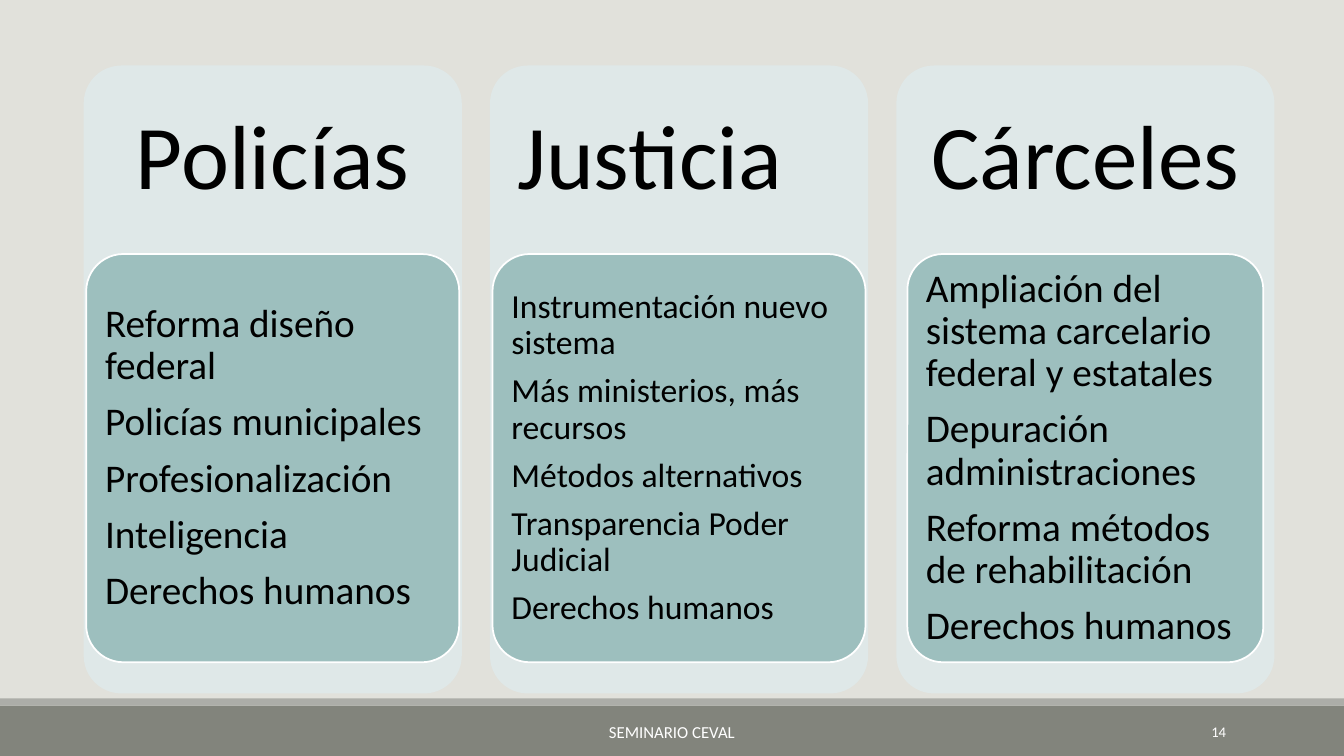
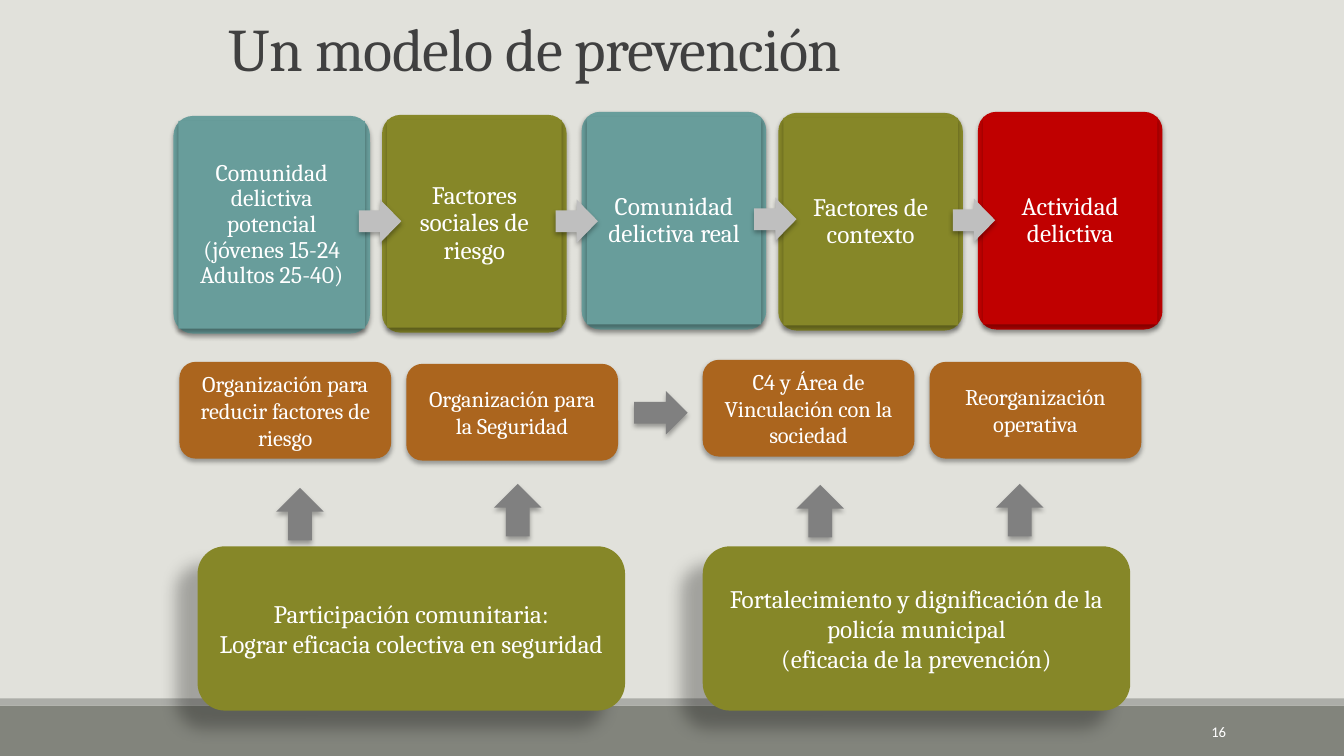
from dataclasses import dataclass

from lxml.etree import SubElement
from pptx import Presentation
from pptx.dml.color import RGBColor
from pptx.enum.shapes import MSO_SHAPE as Preset
from pptx.enum.text import MSO_ANCHOR as Anchor, MSO_AUTO_SIZE as AutoSize, PP_ALIGN as Align
from pptx.oxml.ns import qn
from pptx.shapes.autoshape import Shape
from pptx.slide import Slide
from pptx.util import Inches, Pt

BACKGROUND = RGBColor(0xE1, 0xE1, 0xDB)
BAND = RGBColor(0x82, 0x84, 0x7C)
BAND_EDGE = RGBColor(0xAC, 0xAD, 0xA8)
WHITE = RGBColor(0xFF, 0xFF, 0xFF)
BLACK = RGBColor(0x00, 0x00, 0x00)
TITLE_GREY = RGBColor(0x40, 0x40, 0x40)
COLUMN_TINT = RGBColor(0xDF, 0xE8, 0xE8)
PANEL_TEAL = RGBColor(0x9D, 0xBF, 0xBE)
TEAL = RGBColor(0x68, 0x9D, 0x9B)
OLIVE = RGBColor(0x86, 0x87, 0x28)
RED = RGBColor(0xC0, 0x00, 0x00)
BROWN = RGBColor(0xAB, 0x65, 0x1E)
LIGHT_ARROW = RGBColor(0xBF, 0xBF, 0xBF)
DARK_ARROW = RGBColor(0x80, 0x80, 0x80)
SANS = "Calibri"
SERIF = "Cambria"
SLIDE_WIDTH = 13.33


@dataclass(frozen=True)
class Box:
    left: float
    top: float
    width: float
    height: float

    def lengths(self) -> tuple[Inches, Inches, Inches, Inches]:
        return Inches(self.left), Inches(self.top), Inches(self.width), Inches(self.height)

    def inset(self, margin: float) -> "Box":
        return Box(self.left + margin, self.top + margin,
                   self.width - 2 * margin, self.height - 2 * margin)


@dataclass(frozen=True)
class Shadow:
    opacity: int
    blur: float
    distance: float
    angle: int


@dataclass(frozen=True)
class TextStyle:
    font: str
    size: float
    color: RGBColor
    align: Align = Align.CENTER
    line_spacing: float = 1.0
    space_after: float = 0
    margin_x: float = 0.1
    margin_y: float = 0.05


@dataclass(frozen=True)
class Column:
    heading: str
    points: tuple[str, ...]
    size: int
    panel_width: float
    heading_shift: float = 0


@dataclass(frozen=True)
class Block:
    text: str
    box: Box
    fill: RGBColor
    size: int


SOFT_SHADOW = Shadow(32, 3.5, 2.2, 90)
DEEP_SHADOW = Shadow(28, 11.8, 19.7, 141)

COLUMNS = (
    Column("Policías", ("Reforma diseño federal", "Policías municipales", "Profesionalización",
                        "Inteligencia", "Derechos humanos"), 28, 3.7),
    Column("Justicia", ("Instrumentación nuevo sistema", "Más ministerios, más recursos",
                        "Métodos alternativos", "Transparencia Poder Judicial",
                        "Derechos humanos"), 24, 3.7, -0.29),
    Column("Cárceles", ("Ampliación del sistema carcelario federal y estatales",
                        "Depuración administraciones", "Reforma métodos de rehabilitación",
                        "Derechos humanos"), 28, 3.53),
)

STAGES = (
    Block("Comunidad delictiva potencial\n(jóvenes 15-24\nAdultos 25-40)",
          Box(1.72, 1.15, 1.95, 2.16), TEAL, 17),
    Block("Factores sociales de riesgo", Box(3.79, 1.14, 1.83, 2.16), OLIVE, 18),
    Block("Comunidad delictiva real", Box(5.77, 1.11, 1.83, 2.16), TEAL, 18),
    Block("Factores de contexto", Box(7.72, 1.12, 1.83, 2.16), OLIVE, 18),
    Block("Actividad delictiva", Box(9.7, 1.11, 1.83, 2.16), RED, 18),
)
STAGE_ARROWS = ((3.56, 1.98), (5.51, 1.98), (7.48, 1.96), (9.45, 1.97))

RESPONSES = (
    Block("Organización para reducir factores de riesgo", Box(1.78, 3.59, 2.1, 0.96), BROWN, 16),
    Block("Organización para la Seguridad", Box(4.03, 3.61, 2.1, 0.96), BROWN, 16),
    Block("C4 y Área de Vinculación con la sociedad", Box(6.97, 3.57, 2.1, 0.96), BROWN, 16),
    Block("Reorganización operativa", Box(9.22, 3.59, 2.1, 0.96), BROWN, 16),
)
SUPPORT_ARROWS = ((2.74, 4.84), (4.9, 4.8), (7.9, 4.81), (9.88, 4.8))

FOUNDATIONS = (
    Block("Participación comunitaria:\nLograr eficacia colectiva en seguridad",
          Box(1.96, 5.42, 4.24, 1.63), OLIVE, 18),
    Block("Fortalecimiento y dignificación de la policía municipal\n(eficacia de la prevención)",
          Box(6.97, 5.42, 4.24, 1.63), OLIVE, 18),
)


def write_text(shape: Shape, text: str, style: TextStyle) -> None:
    frame = shape.text_frame
    frame.text = text
    frame.word_wrap = True
    frame.auto_size = AutoSize.NONE
    frame.vertical_anchor = Anchor.MIDDLE
    frame.margin_left = frame.margin_right = Inches(style.margin_x)
    frame.margin_top = frame.margin_bottom = Inches(style.margin_y)
    for paragraph in frame.paragraphs:
        paragraph.alignment = style.align
        paragraph.line_spacing = style.line_spacing
        paragraph.space_after = Pt(style.space_after)
        for run in paragraph.runs:
            run.font.name = style.font
            run.font.size = Pt(style.size)
            run.font.color.rgb = style.color


def add_label(slide: Slide, box: Box, text: str, style: TextStyle) -> None:
    write_text(slide.shapes.add_textbox(*box.lengths()), text, style)


def cast_shadow(shape: Shape, shadow: Shadow) -> None:
    effects = shape._element.spPr.find(qn("a:effectLst"))
    outer = SubElement(effects, qn("a:outerShdw"), blurRad=str(Pt(shadow.blur)),
                       dist=str(Pt(shadow.distance)), dir=str(shadow.angle * 60000),
                       algn="ctr", rotWithShape="0")
    color = SubElement(outer, qn("a:srgbClr"), val=str(BLACK))
    SubElement(color, qn("a:alpha"), val=str(shadow.opacity * 1000))


def add_filled(slide: Slide, preset: Preset, box: Box, fill: RGBColor,
               shadow: Shadow | None = None, corner: float | None = None) -> Shape:
    shape = slide.shapes.add_shape(preset, *box.lengths())
    shape.fill.solid()
    shape.fill.fore_color.rgb = fill
    shape.line.fill.background()
    shape.shadow.inherit = False
    if shadow:
        cast_shadow(shape, shadow)
    if corner is not None:
        shape.adjustments[0] = corner
    return shape


def add_footer(slide: Slide, number: str, seminar: str = "") -> None:
    add_filled(slide, Preset.RECTANGLE, Box(0, 7, SLIDE_WIDTH, 0.5), BAND)
    add_filled(slide, Preset.RECTANGLE, Box(0, 6.93, SLIDE_WIDTH, 0.07), BAND_EDGE)
    if seminar:
        add_label(slide, Box(4.03, 7.06, 5.27, 0.4), seminar, TextStyle(SANS, 12, WHITE))
    add_label(slide, Box(10.83, 7.06, 1.43, 0.4), number,
              TextStyle(SANS, 10.5, WHITE, Align.RIGHT))


def set_title(slide: Slide, text: str) -> None:
    title = slide.shapes.title
    title.left, title.top, title.width, title.height = Box(2.17, 0.2, 9, 0.68).lengths()
    write_text(title, text, TextStyle(SERIF, 43.2, TITLE_GREY, Align.LEFT, 0.85))
    title.text_frame.vertical_anchor = Anchor.BOTTOM
    title.text_frame.paragraphs[0].runs[0].font._element.set("spc", "-50")


def add_column(slide: Slide, index: int, column: Column) -> None:
    area = Box(0.83 + 4.03 * index, 0.65, 3.75, 6.23)
    add_filled(slide, Preset.ROUNDED_RECTANGLE, area, COLUMN_TINT, corner=0.1)
    add_label(slide, Box(area.left + column.heading_shift, area.top, area.width, 1.87),
              column.heading, TextStyle(SANS, 65, BLACK, line_spacing=0.9,
                                        margin_x=0.27, margin_y=0.27))
    panel_left = area.left + (area.width - column.panel_width) / 2
    panel = add_filled(slide, Preset.ROUNDED_RECTANGLE,
                       Box(panel_left, 2.52, column.panel_width, 4.05), PANEL_TEAL, corner=0.1)
    panel.line.color.rgb = WHITE
    panel.line.width = Pt(1.25)
    write_text(panel, "\n".join(column.points),
               TextStyle(SANS, column.size, BLACK, Align.LEFT, 0.9, column.size * 0.35,
                         0.08, 0.06))


def add_stage(slide: Slide, stage: Block) -> None:
    add_filled(slide, Preset.ROUNDED_RECTANGLE, stage.box, stage.fill, SOFT_SHADOW, 0.1)
    face = add_filled(slide, Preset.RECTANGLE, stage.box.inset(0.05), stage.fill, SOFT_SHADOW)
    write_text(face, stage.text, TextStyle(SERIF, stage.size, WHITE, line_spacing=0.9,
                                           margin_x=0.11, margin_y=0.11))


def add_block(slide: Slide, block: Block, shadow: Shadow) -> None:
    shape = add_filled(slide, Preset.ROUNDED_RECTANGLE, block.box, block.fill, shadow)
    write_text(shape, block.text, TextStyle(SERIF, block.size, WHITE))


def build_reforms(slide: Slide) -> None:
    add_footer(slide, "14", "SEMINARIO CEVAL")
    for index, column in enumerate(COLUMNS):
        add_column(slide, index, column)


def build_prevention(slide: Slide) -> None:
    add_footer(slide, "16")
    set_title(slide, "Un modelo de prevención")
    for stage in STAGES:
        add_stage(slide, stage)
    for left, top in STAGE_ARROWS:
        add_filled(slide, Preset.RIGHT_ARROW, Box(left, top, 0.42, 0.43), LIGHT_ARROW, SOFT_SHADOW)
    for foundation in FOUNDATIONS:
        add_block(slide, foundation, DEEP_SHADOW)
    for response in RESPONSES:
        add_block(slide, response, SOFT_SHADOW)
    for left, top in SUPPORT_ARROWS:
        add_filled(slide, Preset.UP_ARROW, Box(left, top, 0.47, 0.52), DARK_ARROW, SOFT_SHADOW)
    add_filled(slide, Preset.RIGHT_ARROW, Box(6.29, 3.88, 0.53, 0.43), DARK_ARROW, SOFT_SHADOW)


def main() -> None:
    deck = Presentation()
    deck.slide_width = Inches(SLIDE_WIDTH)
    deck.slide_height = Inches(7.5)
    backdrop = deck.slide_master.background.fill
    backdrop.solid()
    backdrop.fore_color.rgb = BACKGROUND
    title_only, blank = deck.slide_layouts[5], deck.slide_layouts[6]
    build_reforms(deck.slides.add_slide(blank))
    build_prevention(deck.slides.add_slide(title_only))
    deck.save("out.pptx")


if __name__ == "__main__":
    main()
